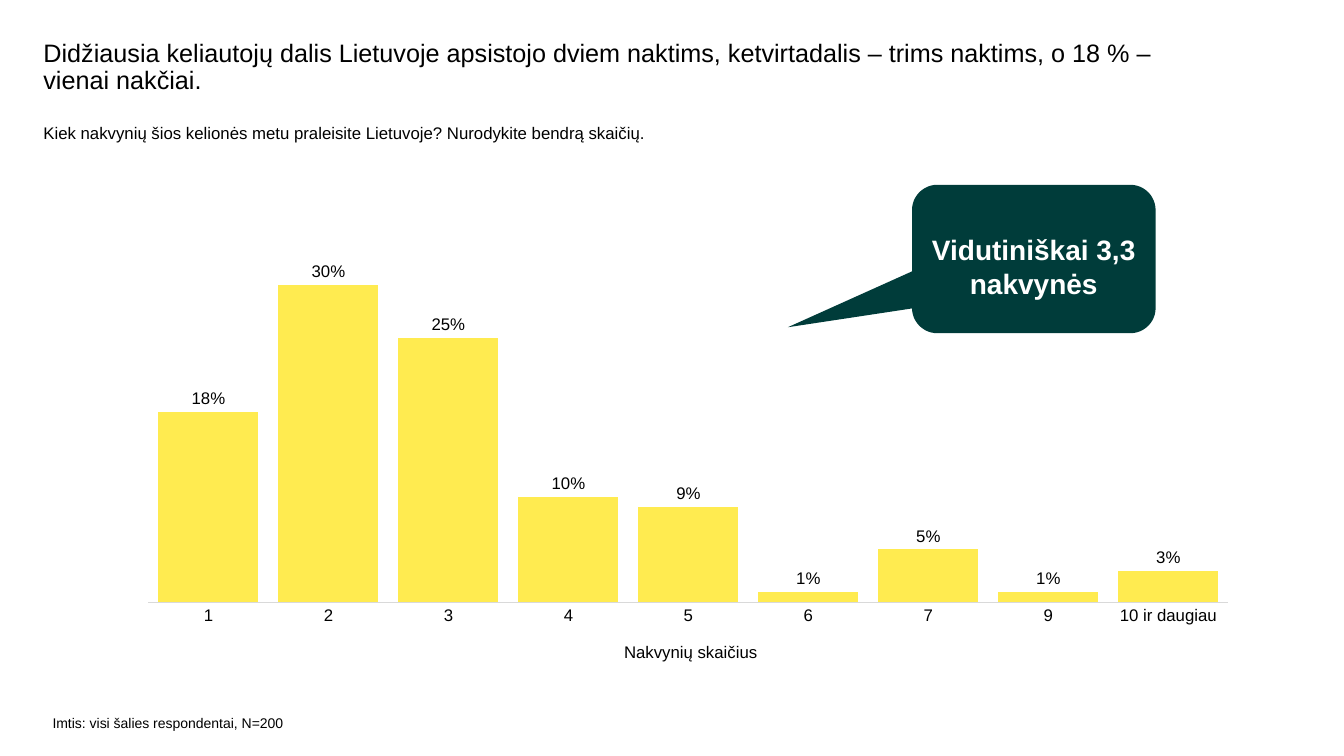
from lxml import etree
from pptx import Presentation
from pptx.chart.data import CategoryChartData
from pptx.dml.color import RGBColor
from pptx.enum.chart import XL_CHART_TYPE as ChartType, XL_LABEL_POSITION as LabelPosition, XL_TICK_MARK as TickMark
from pptx.enum.shapes import MSO_SHAPE as Shape
from pptx.enum.text import MSO_ANCHOR as Anchor, MSO_AUTO_SIZE as AutoSize, PP_ALIGN as Align
from pptx.oxml.ns import qn
from pptx.util import Pt

TITLE = ("Didžiausia keliautojų dalis Lietuvoje apsistojo dviem naktims, "
         "ketvirtadalis – trims naktims, o 18 % – vienai nakčiai.")
QUESTION = "Kiek nakvynių šios kelionės metu praleisite Lietuvoje? Nurodykite bendrą skaičių."
SAMPLE = "Imtis: visi šalies respondentai, N=200"
AVERAGE = "Vidutiniškai 3,3 nakvynės"
AXIS_TITLE = "Nakvynių skaičius"
NIGHTS = {"1": 0.18, "2": 0.30, "3": 0.25, "4": 0.10, "5": 0.09,
          "6": 0.01, "7": 0.05, "9": 0.01, "10 ir daugiau": 0.03}

FONT = "Arial"
BLACK = RGBColor(0x00, 0x00, 0x00)
WHITE = RGBColor(0xFF, 0xFF, 0xFF)
YELLOW = RGBColor(0xFF, 0xEB, 0x50)
GREEN = RGBColor(0x00, 0x3C, 0x3A)
GREY = RGBColor(0xD9, 0xD9, 0xD9)


def points(*lengths):
    return [Pt(length) for length in lengths]


def style_font(font, size=12, color=BLACK, bold=False):
    font.name, font.size, font.bold = FONT, Pt(size), bold
    font.color.rgb = color


def write(box, text, margins=(0, 0, 0, 0), anchor=Anchor.TOP, align=Align.LEFT,
          spacing=None, **font_format):
    frame = box.text_frame
    frame.word_wrap = True
    frame.auto_size = AutoSize.NONE
    frame.vertical_anchor = anchor
    (frame.margin_left, frame.margin_top,
     frame.margin_right, frame.margin_bottom) = points(*margins)
    para = frame.paragraphs[0]
    para.alignment = align
    para.line_spacing = spacing
    span = para.add_run()
    span.text = text
    style_font(span.font, **font_format)


def place(parent, index, **fractions):
    """Give a chart part a manual layout, as fractions of the chart area."""
    for old in parent.findall(qn("c:layout")):
        parent.remove(old)
    layout = etree.Element(qn("c:layout"))
    manual = etree.SubElement(layout, qn("c:manualLayout"))
    for name, value in fractions.items():
        etree.SubElement(manual, qn(f"c:{name}")).set("val", str(value))
    parent.insert(index, layout)


def add_nights_chart(page):
    data = CategoryChartData(number_format="0%")
    data.categories = list(NIGHTS)
    data.add_series("Series 1", list(NIGHTS.values()))
    chart = page.shapes.add_chart(ChartType.COLUMN_CLUSTERED,
                                  *points(90, 159, 803.5, 327), data).chart
    style_font(chart.font)
    chart.has_legend = chart.has_title = False

    plot = chart.plots[0]
    plot.gap_width = 20
    plot.vary_by_categories = False
    fill = plot.series[0].format.fill
    fill.solid()
    fill.fore_color.rgb = YELLOW
    plot.has_data_labels = True
    labels = plot.data_labels
    labels.show_value = True
    labels.position = LabelPosition.OUTSIDE_END
    labels.number_format, labels.number_format_is_linked = "0%", False
    style_font(labels.font)

    values = chart.value_axis
    values.minimum_scale, values.maximum_scale = 0, 0.35
    values.has_major_gridlines = False
    values.visible = False

    nights = chart.category_axis
    nights.major_tick_mark = nights.minor_tick_mark = TickMark.NONE
    nights.format.line.color.rgb = GREY
    nights.format.line.width = Pt(0.75)
    style_font(nights.tick_labels.font)
    para = nights.axis_title.text_frame.paragraphs[0]
    span = para.add_run()
    span.text = AXIS_TITLE
    style_font(span.font)

    place(nights.axis_title._element, 1, xMode="edge", yMode="edge", x=0.44, y=0.91)
    place(chart._chartSpace.chart.plotArea, 0, layoutTarget="inner",
          xMode="edge", yMode="edge", x=0.02, y=0.02, w=0.96, h=0.81)


def add_callout(page):
    callout = page.shapes.add_shape(Shape.ROUNDED_RECTANGULAR_CALLOUT,
                                    *points(651.5, 132, 174, 106))
    for index, value in enumerate((-1.01, 0.46, 0.17)):
        callout.adjustments[index] = value
    callout.shadow.inherit = False
    callout.fill.solid()
    callout.fill.fore_color.rgb = GREEN
    callout.line.fill.background()
    write(callout, AVERAGE, margins=(7.2, 13.6, 7.2, 3.6), anchor=Anchor.MIDDLE,
          align=Align.CENTER, size=20, color=WHITE, bold=True)


deck = Presentation()
deck.slide_width, deck.slide_height = points(960, 540)
page = deck.slides.add_slide(deck.slide_layouts[5])

title = page.shapes.title
title.left, title.top, title.width, title.height = points(31, 29, 810, 43)
write(title, TITLE, spacing=0.9, size=18)
write(page.shapes.add_textbox(*points(31, 88, 856, 44)), QUESTION, size=12)
write(page.shapes.add_textbox(*points(37.5, 510.5, 182, 17)), SAMPLE, size=10)
add_nights_chart(page)
add_callout(page)

deck.save("out.pptx")
